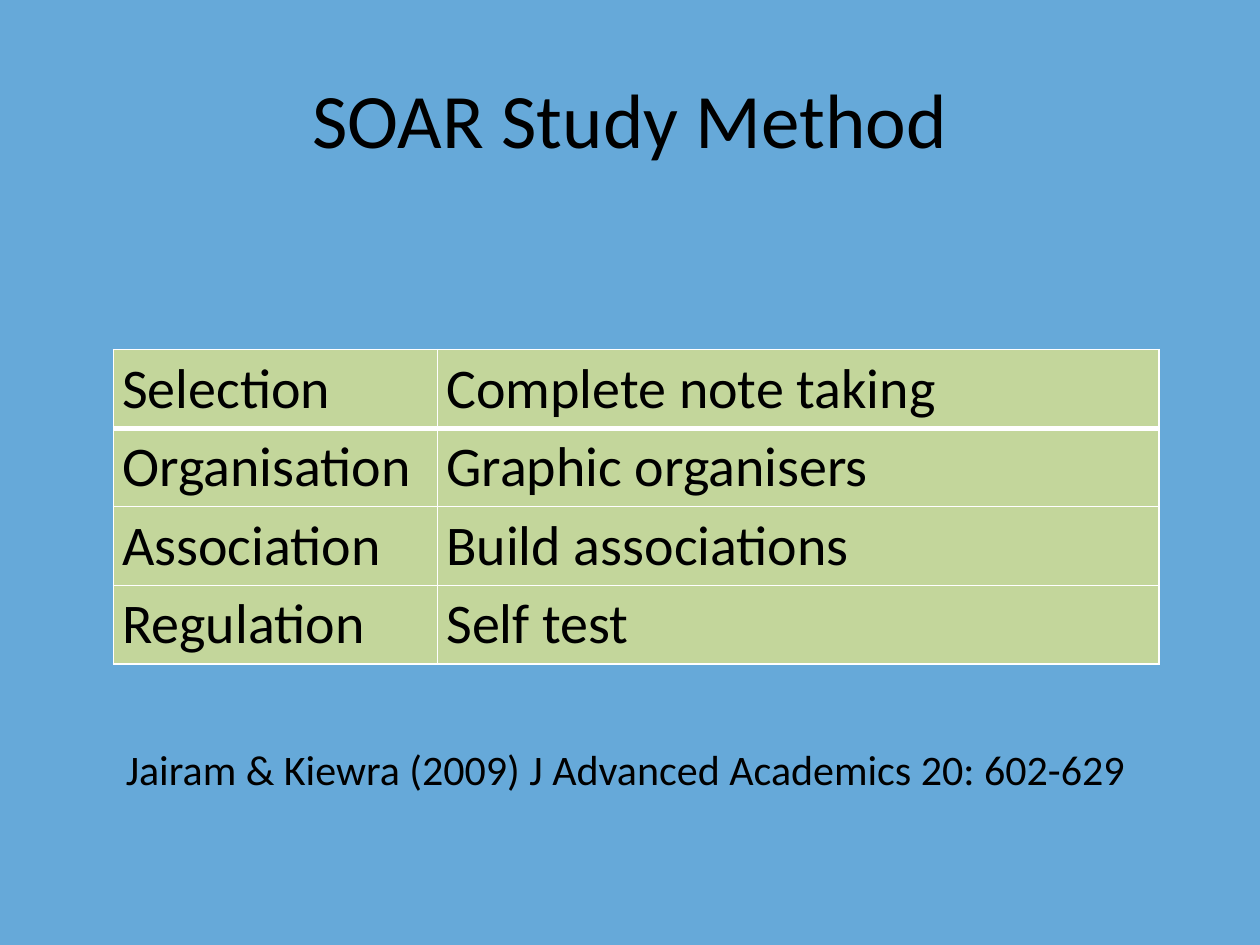
from lxml.etree import SubElement
from pptx import Presentation
from pptx.dml.color import RGBColor
from pptx.enum.text import MSO_ANCHOR, MSO_AUTO_SIZE, PP_ALIGN
from pptx.oxml.ns import qn
from pptx.util import Inches, Pt

SKY = RGBColor(0x66, 0xA9, 0xD9)
SAGE = RGBColor(0xC3, 0xD6, 0x9B)
BLACK = RGBColor(0, 0, 0)
WHITE = RGBColor(0xFF, 0xFF, 0xFF)

STEPS = [
    ("Selection", "Complete note taking"),
    ("Organisation", "Graphic organisers"),
    ("Association", "Build associations"),
    ("Regulation", "Self test"),
]


class StudySlide:
    """Holds the style and the slide; lengths are shares of the slide's size."""

    font = "Calibri"

    def __init__(self, deck):
        self.width, self.height = deck.slide_width, deck.slide_height
        self.slide = deck.slides.add_slide(deck.slide_layouts[5])
        self.slide.background.fill.solid()
        self.slide.background.fill.fore_color.rgb = SKY

    def box(self, left, top, width, height):
        return (int(left * self.width), int(top * self.height),
                int(width * self.width), int(height * self.height))

    def set_text(self, frame, text, size, align=PP_ALIGN.LEFT):
        frame.text = text
        paragraph = frame.paragraphs[0]
        paragraph.alignment = align
        for run in paragraph.runs:
            run.font.name = self.font
            run.font.size = Pt(size)
            run.font.bold = False
            run.font.color.rgb = BLACK

    def title(self, text, area):
        heading = self.slide.shapes.title
        heading.left, heading.top, heading.width, heading.height = self.box(*area)
        heading.text_frame.vertical_anchor = MSO_ANCHOR.MIDDLE
        self.set_text(heading.text_frame, text, 44, PP_ALIGN.CENTER)

    def border(self, cell, side, points):
        line = SubElement(cell._tc.get_or_add_tcPr(), qn(f"a:ln{side}"), w=str(Pt(points)))
        SubElement(SubElement(line, qn("a:solidFill")), qn("a:srgbClr"), val=str(WHITE))

    def table(self, rows, area, column_shares):
        left, top, width, height = self.box(*area)
        grid = self.slide.shapes.add_table(
            len(rows), len(column_shares), left, top, width, height).table
        for column, share in zip(grid.columns, column_shares):
            column.width = int(width * share)
        for r, row in enumerate(rows):
            for c, text in enumerate(row):
                cell = grid.cell(r, c)
                cell.margin_left = cell.margin_right = Inches(0.07)
                cell.margin_top = cell.margin_bottom = Inches(0.04)
                # A heavy rule separates the first row from the rest
                for side in "LRTB":
                    heavy = (r, side) in ((0, "B"), (1, "T"))
                    self.border(cell, side, 3 if heavy else 1)
                cell.fill.solid()
                cell.fill.fore_color.rgb = SAGE
                self.set_text(cell.text_frame, text, 32)

    def citation(self, text, area):
        frame = self.slide.shapes.add_textbox(*self.box(*area)).text_frame
        frame.word_wrap = False
        frame.auto_size = MSO_AUTO_SIZE.SHAPE_TO_FIT_TEXT
        self.set_text(frame, text, 24)


def main():
    deck = Presentation()
    deck.slide_width, deck.slide_height = Inches(10), Inches(7.5)
    soar = StudySlide(deck)

    # Heading
    soar.title("SOAR Study Method", (0.05, 0.04, 0.9, 0.17))
    # The four steps and what each asks for
    soar.table(STEPS, (0.09, 0.37, 0.83, 0.33), (0.31, 0.69))
    # Reference
    soar.citation("Jairam & Kiewra (2009) J Advanced Academics 20: 602-629",
                  (0.09, 0.78, 0.82, 0.07))

    deck.save("out.pptx")


if __name__ == "__main__":
    main()
